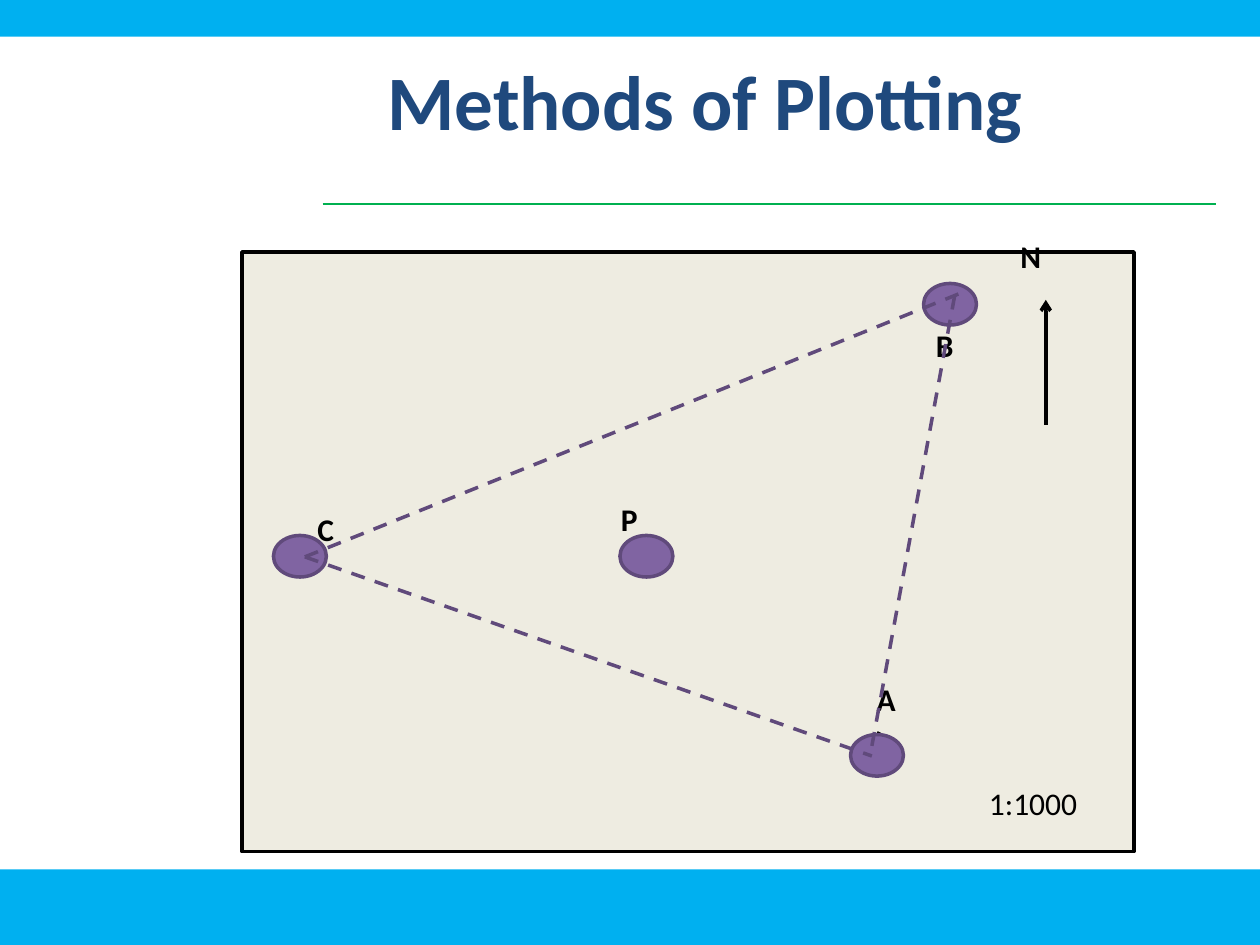
from dataclasses import dataclass

from lxml import etree
from pptx import Presentation
from pptx.dml.color import RGBColor
from pptx.enum import dml, shapes, text
from pptx.oxml import ns
from pptx.util import Inches, Pt


@dataclass(frozen=True)
class Theme:
    font: str = "Calibri"
    band: str = "00B0F0"
    rule: str = "00B050"
    title: str = "1F497D"
    ink: str = "000000"
    sheet: str = "EEECE1"
    point: str = "8064A2"
    edge: str = "604A7B"
    head: int = 44
    body: int = 18
    thin: float = 0.75
    line: float = 2
    mark: float = 2.25


THEME = Theme()


def style(para, size, color, bold):
    look = {"name": THEME.font, "size": Pt(size), "bold": bold}
    for key, value in look.items():
        setattr(para.font, key, value)
    para.font.color.rgb = RGBColor.from_string(color)


def place(item, box):
    for key, value in zip(("left", "top", "width", "height"), box):
        setattr(item, key, Inches(value))


def add_title(slide, words, box):
    title = slide.shapes.title
    place(title, box)
    frame = title.text_frame
    frame.text = words
    frame.vertical_anchor = text.MSO_ANCHOR.MIDDLE
    para = frame.paragraphs[0]
    para.alignment = text.PP_ALIGN.CENTER
    style(para, THEME.head, THEME.title, True)


def add_form(slide, kind, box, fill, edge=None):
    form = slide.shapes.add_shape(kind, *map(Inches, box))
    form.shadow.inherit = False
    form.fill.solid()
    form.fill.fore_color.rgb = RGBColor.from_string(fill)
    if edge:
        form.line.color.rgb = RGBColor.from_string(edge)
        form.line.width = Pt(THEME.line)
    else:
        form.line.fill.background()


def add_label(slide, words, box, bold=True):
    label = slide.shapes.add_textbox(*map(Inches, box))
    frame = label.text_frame
    frame.word_wrap = True
    frame.text = words
    style(frame.paragraphs[0], THEME.body, THEME.ink, bold)


def add_line(slide, start, end, color, width, dash=None, arrow=False):
    line = slide.shapes.add_connector(
        shapes.MSO_CONNECTOR.STRAIGHT, *map(Inches, start + end))
    line.line.color.rgb = RGBColor.from_string(color)
    line.line.width = Pt(width)
    if dash:
        line.line.dash_style = dash
    if arrow:
        tip = etree.SubElement(line.line._get_or_add_ln(), ns.qn("a:tailEnd"))
        tip.set("type", "arrow")
    etree.SubElement(line._element.spPr, ns.qn("a:effectLst"))


def main():
    deck = Presentation()
    deck.slide_width, deck.slide_height = Inches(10), Inches(7.5)
    slide = deck.slides.add_slide(deck.slide_layouts[5])
    rect, oval = shapes.MSO_SHAPE.RECTANGLE, shapes.MSO_SHAPE.OVAL

    for top, height in ((6.9, 0.6), (0, 0.29)):
        add_form(slide, rect, (0, top, 10, height), THEME.band)
    add_line(slide, (2.56, 1.62), (9.65, 1.62), THEME.rule, THEME.thin)
    add_title(slide, "Methods of Plotting", (1.5, 0.17, 8.2, 1.25))

    add_form(slide, rect, (1.92, 2, 7.08, 4.76), THEME.sheet, THEME.ink)
    add_line(slide, (8.3, 3.37), (8.3, 2.38), THEME.ink, THEME.line, arrow=True)
    add_line(slide, (6.86, 6.07), (6.98, 5.81), THEME.ink, THEME.mark)

    labels = {"B": (7.33, 2.54), "N": (8, 1.83), "A": (6.86, 5.35),
              "C": (2.42, 4), "P": (4.83, 3.92)}
    for name, spot in labels.items():
        add_label(slide, name, spot + (0.83, 0.4))

    for spot in ((6.75, 5.83), (7.33, 2.25), (2.17, 4.25), (4.92, 4.25)):
        add_form(slide, oval, spot + (0.42, 0.33), THEME.point, THEME.edge)
    add_label(slide, "1:1000", (7.75, 6.17, 1.08, 0.4), bold=False)

    sides = (((6.92, 5.92), (7.58, 2.33)),
             ((2.42, 4.42), (7.69, 2.3)),
             ((2.42, 4.42), (6.92, 6)))
    for start, end in sides:
        add_line(slide, start, end, THEME.edge, THEME.line,
                 dash=dml.MSO_LINE.DASH)

    deck.save("out.pptx")


if __name__ == "__main__":
    main()
